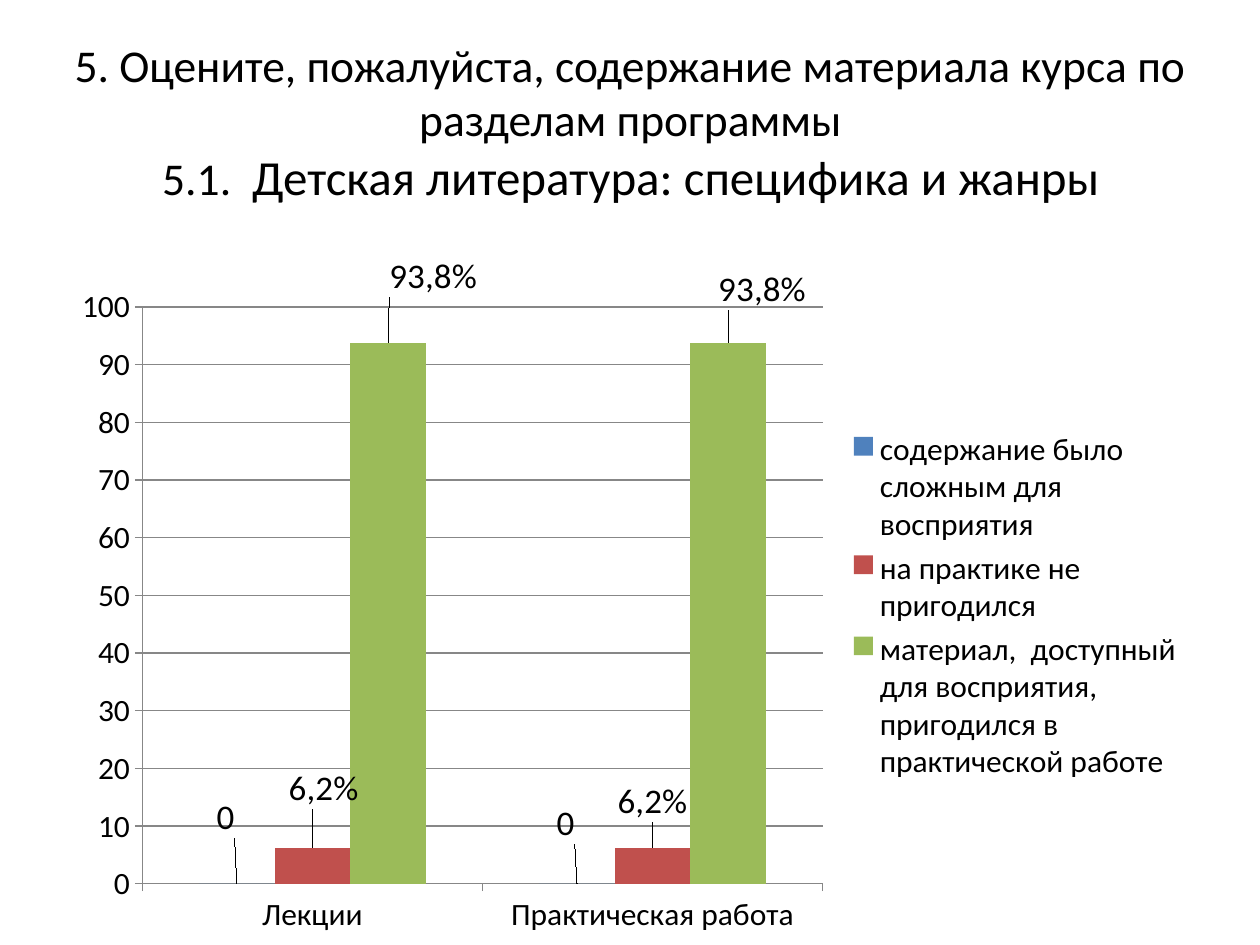
"""Build the survey slide on children's literature course content."""
from dataclasses import dataclass

import pptx
import pptx.chart.data
import pptx.dml.color
import pptx.enum.chart
import pptx.enum.text
import pptx.oxml
import pptx.oxml.ns
import pptx.util

Pt = pptx.util.Pt


@dataclass(frozen=True)
class Theme:
    font: str = "Calibri"
    text: str = "000000"
    grid: str = "878787"
    series: tuple = ("4F81BD", "C0504D", "9BBB59")
    question_size: int = 26
    topic_size: int = 28
    axis_size: int = 18
    label_size: int = 20


def rgb(value):
    return pptx.dml.color.RGBColor.from_string(value)


def apply(target, values):
    for name, value in values.items():
        setattr(target, name, value)


def manual_layout(**values):
    tags = "".join(f'<c:{tag} val="{value}"/>' for tag, value in values.items())
    return pptx.oxml.parse_xml(
        f'<c:layout {pptx.oxml.ns.nsdecls("c")}><c:manualLayout>{tags}</c:manualLayout></c:layout>')


class SurveySlide:
    def __init__(self, deck, theme):
        self.theme = theme
        self.slide = deck.slides.add_slide(deck.slide_layouts[5])

    def style_font(self, font, size):
        apply(font, {"name": self.theme.font, "size": Pt(size), "bold": False})
        font.color.rgb = rgb(self.theme.text)

    def style_line(self, line):
        line.color.rgb = rgb(self.theme.grid)
        line.width = Pt(0.75)

    def title(self, box, lines):
        heading = self.slide.shapes.title
        apply(heading, dict(zip(("left", "top", "width", "height"), map(Pt, box))))
        apply(heading.text_frame, {
            "word_wrap": True,
            "auto_size": pptx.enum.text.MSO_AUTO_SIZE.NONE,
            "vertical_anchor": pptx.enum.text.MSO_ANCHOR.MIDDLE,
        })
        paragraph = heading.text_frame.paragraphs[0]
        paragraph.alignment = pptx.enum.text.PP_ALIGN.CENTER
        for index, line in enumerate(lines):
            if index:
                paragraph.add_line_break()
            for text, size in line:
                run = paragraph.add_run()
                run.text = text
                self.style_font(run.font, size)

    def chart(self, box, categories, answers, plot_area):
        data = pptx.chart.data.CategoryChartData()
        data.categories = categories
        for name, values, _, _ in answers:
            data.add_series(name, values)
        kind = pptx.enum.chart.XL_CHART_TYPE.COLUMN_CLUSTERED
        chart = self.slide.shapes.add_chart(kind, *map(Pt, box), data).chart
        self.style_font(chart.font, self.theme.axis_size)
        apply(chart, {"has_title": False, "has_legend": True})
        apply(chart.legend, {
            "position": pptx.enum.chart.XL_LEGEND_POSITION.RIGHT,
            "include_in_layout": False,
        })
        plot = chart.plots[0]
        apply(plot, {"gap_width": 150, "overlap": 0, "vary_by_categories": False})
        self.axes(chart)
        for series, color, answer in zip(plot.series, self.theme.series, answers):
            series.format.fill.solid()
            series.format.fill.fore_color.rgb = rgb(color)
            self.labels(series, *answer[2:])
        area = chart.element.xpath("c:chart/c:plotArea")[0]
        for layout in area.xpath("c:layout"):
            area.remove(layout)
        x, y, w, h = plot_area
        area.insert(0, manual_layout(
            layoutTarget="inner", xMode="edge", yMode="edge", x=x, y=y, w=w, h=h))

    def axes(self, chart):
        outside = pptx.enum.chart.XL_TICK_MARK.OUTSIDE
        for axis in (chart.category_axis, chart.value_axis):
            axis.major_tick_mark = outside
            self.style_line(axis.format.line)
        apply(chart.value_axis, {
            "minimum_scale": 0, "maximum_scale": 100, "major_unit": 10,
            "has_major_gridlines": True,
        })
        self.style_line(chart.value_axis.major_gridlines.format.line)

    def labels(self, series, wording, offsets):
        outside_end = pptx.enum.chart.XL_LABEL_POSITION.OUTSIDE_END
        apply(series.data_labels, {"show_value": True, "position": outside_end})
        self.style_font(series.data_labels.font, self.theme.label_size)
        for index, (x, y) in enumerate(offsets):
            label = series.points[index].data_label
            if wording:
                run = label.text_frame.paragraphs[0].add_run()
                run.text = wording
                self.style_font(run.font, self.theme.label_size)
            else:
                self.style_font(label.font, self.theme.label_size)
            label.position = outside_end
        for node, (x, y) in zip(series.data_labels._element.xpath("c:dLbl"), offsets):
            node.insert(1, manual_layout(x=x, y=y))


def main():
    deck = pptx.Presentation()
    apply(deck, {"slide_width": Pt(720), "slide_height": Pt(540)})
    theme = Theme()
    survey = SurveySlide(deck, theme)
    survey.title((14.4, 21.6, 692, 95), [
        [("5. Оцените, пожалуйста, содержание материала курса по разделам программы",
          theme.question_size)],
        [("5.1.  ", theme.question_size),
         ("Детская литература: специфика и жанры", theme.topic_size)],
    ])
    answers = [
        ("содержание было сложным для восприятия", (0, 0), None,
         ((-0.01, -0.06), (-0.01, -0.05))),
        ("на практике не пригодился", (6.2, 6.2), "6,2%",
         ((0.01, -0.05), (0, -0.03))),
        ("материал,  доступный для восприятия, пригодился в практической работе",
         (93.8, 93.8), "93,8%", ((0.04, -0.06), (0.03, -0.04))),
    ]
    survey.chart((36, 145.4, 648, 394.6), ("Лекции", "Практическая работа"),
                 answers, (0.07, 0.06, 0.6, 0.85))
    deck.save("out.pptx")


if __name__ == "__main__":
    main()
